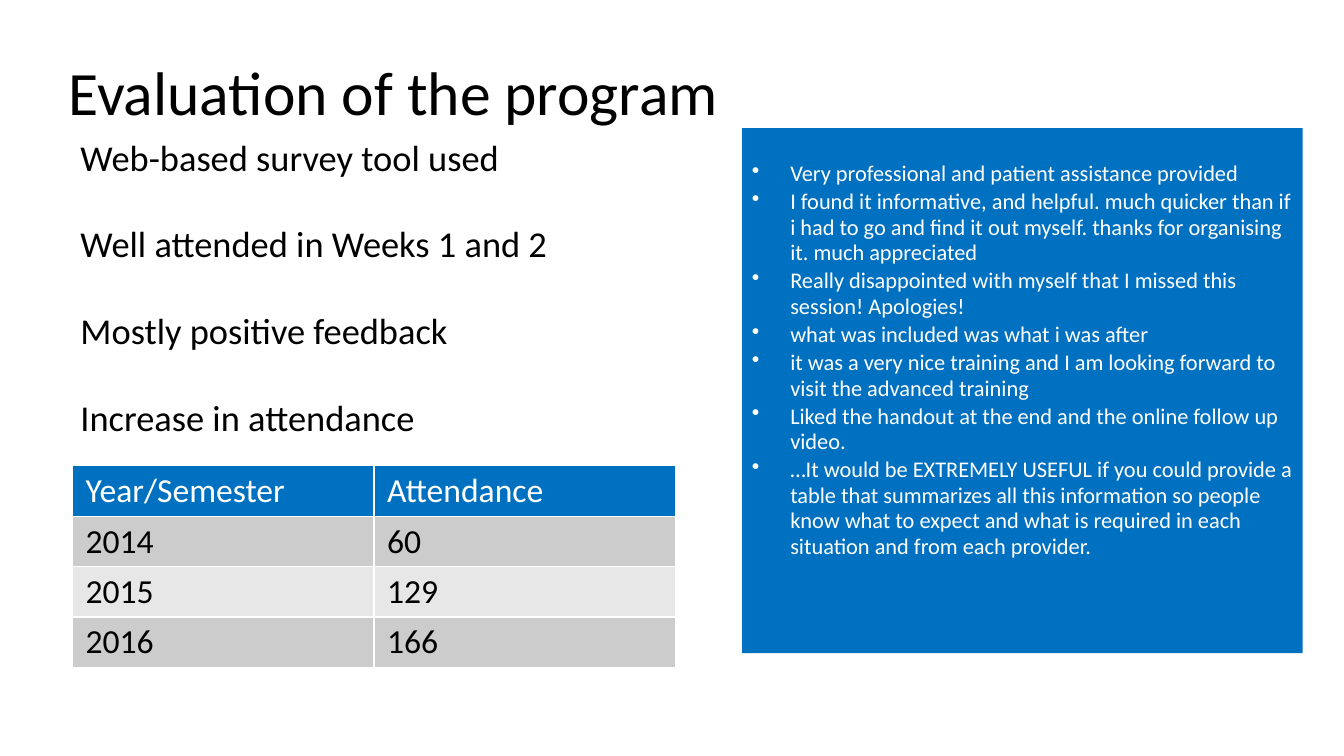
import dataclasses

import lxml.etree
import pptx
import pptx.dml.color
import pptx.enum.shapes
import pptx.enum.text
import pptx.oxml
import pptx.oxml.ns
import pptx.util

Inches = pptx.util.Inches
Pt = pptx.util.Pt


@dataclasses.dataclass
class Theme:
    font: str = "Calibri"
    black: str = "000000"
    white: str = "FFFFFF"
    blue: str = "0070C0"
    bands: tuple = ("CCCCCC", "E7E7E7")
    title: int = 44
    point: int = 26
    cell: int = 24
    quote: int = 16


class Deck:
    def __init__(self, theme):
        self.theme = theme
        self.file = pptx.Presentation()
        self.file.slide_width = Inches(13.33)
        self.file.slide_height = Inches(7.5)
        self.slide = self.file.slides.add_slide(self.file.slide_layouts[6])

    def paint(self, fill, hue):
        fill.solid()
        fill.fore_color.rgb = pptx.dml.color.RGBColor.from_string(hue)

    def add_run(self, para, text, size, hue):
        run = para.add_run()
        run.text = text
        run.font.name = self.theme.font
        run.font.size = Pt(size)
        run.font.bold = False
        self.paint(run.font.fill, hue)

    def lines(self, frame, texts, size, hue, gap=0, pitch=None, mark=None):
        frame.word_wrap = True
        for i, text in enumerate(texts):
            para = frame.add_paragraph() if i else frame.paragraphs[0]
            para.alignment = pptx.enum.text.PP_ALIGN.LEFT
            if pitch:
                para.line_spacing = pitch
            if i and gap:
                para.space_before = Pt(gap)
            if mark:
                props = para._p.get_or_add_pPr()
                props.set("marL", str(Inches(0.38)))
                props.set("indent", str(Inches(-0.38)))
                tag = pptx.oxml.ns.qn("a:buChar")
                lxml.etree.SubElement(props, tag).set("char", mark)
            self.add_run(para, text, size, hue)

    def text(self, place, texts, size, anchor, **style):
        box = self.slide.shapes.add_textbox(*map(Inches, place))
        box.text_frame.vertical_anchor = anchor
        self.lines(box.text_frame, texts, size, self.theme.black, **style)

    def panel(self, place, texts):
        kind = pptx.enum.shapes.MSO_SHAPE.RECTANGLE
        shape = self.slide.shapes.add_shape(kind, *map(Inches, place))
        shape.shadow.inherit = False
        self.paint(shape.fill, self.theme.blue)
        shape.line.fill.background()
        frame = shape.text_frame
        frame.vertical_anchor = pptx.enum.text.MSO_ANCHOR.TOP
        frame.margin_top = Inches(0.33)
        self.lines(frame, texts, self.theme.quote, self.theme.white,
                   gap=1.8, pitch=0.95, mark="•")

    def edge(self, cell):
        props = cell._tc.get_or_add_tcPr()
        for side in "LRTB":
            props.append(pptx.oxml.parse_xml(
                f'<a:ln{side} {pptx.oxml.ns.nsdecls("a")} w="{Pt(1)}">'
                f'<a:solidFill><a:srgbClr val="{self.theme.white}"/>'
                f'</a:solidFill></a:ln{side}>'))

    def table(self, place, data):
        grid = self.slide.shapes.add_table(
            len(data), len(data[0]), *map(Inches, place)).table
        for r, row in enumerate(data):
            for c, text in enumerate(row):
                cell = grid.cell(r, c)
                cell.margin_left = cell.margin_right = Inches(0.13)
                cell.margin_top = cell.margin_bottom = Inches(0.05)
                self.edge(cell)
                band = self.theme.bands[(r - 1) % 2]
                self.paint(cell.fill, band if r else self.theme.blue)
                hue = self.theme.black if r else self.theme.white
                self.add_run(cell.text_frame.paragraphs[0], text,
                             self.theme.cell, hue)


def main():
    theme = Theme()
    deck = Deck(theme)
    anchor = pptx.enum.text.MSO_ANCHOR
    deck.text((0.58, 0.43, 12, 1.03), ["Evaluation of the program"],
              theme.title, anchor.MIDDLE, pitch=0.9)
    deck.table((0.72, 4.62, 5.98, 2), [
        ("Year/Semester", "Attendance"),
        ("2014", "60"),
        ("2015", "129"),
        ("2016", "166"),
    ])
    deck.panel((7.36, 1.27, 5.56, 5.21), [
        "Very professional and patient assistance provided",
        "I found it informative, and helpful. much quicker than if i had to "
        "go and find it out myself. thanks for organising it. much appreciated",
        "Really disappointed with myself that I missed this session! Apologies!",
        "what was included was what i was after",
        "it was a very nice training and I am looking forward to visit the "
        "advanced training",
        "Liked the handout at the end and the online follow up video.",
        "…It would be EXTREMELY USEFUL if you could provide a table that "
        "summarizes all this information so people know what to expect and "
        "what is required in each situation and from each provider.",
    ])
    deck.text((0.7, 1.29, 6.03, 4.04), [
        "Web-based survey tool used",
        "Well attended in Weeks 1 and 2",
        "Mostly positive feedback",
        "Increase in attendance",
    ], theme.point, anchor.TOP, gap=30.7)
    deck.file.save("out.pptx")


if __name__ == "__main__":
    main()
